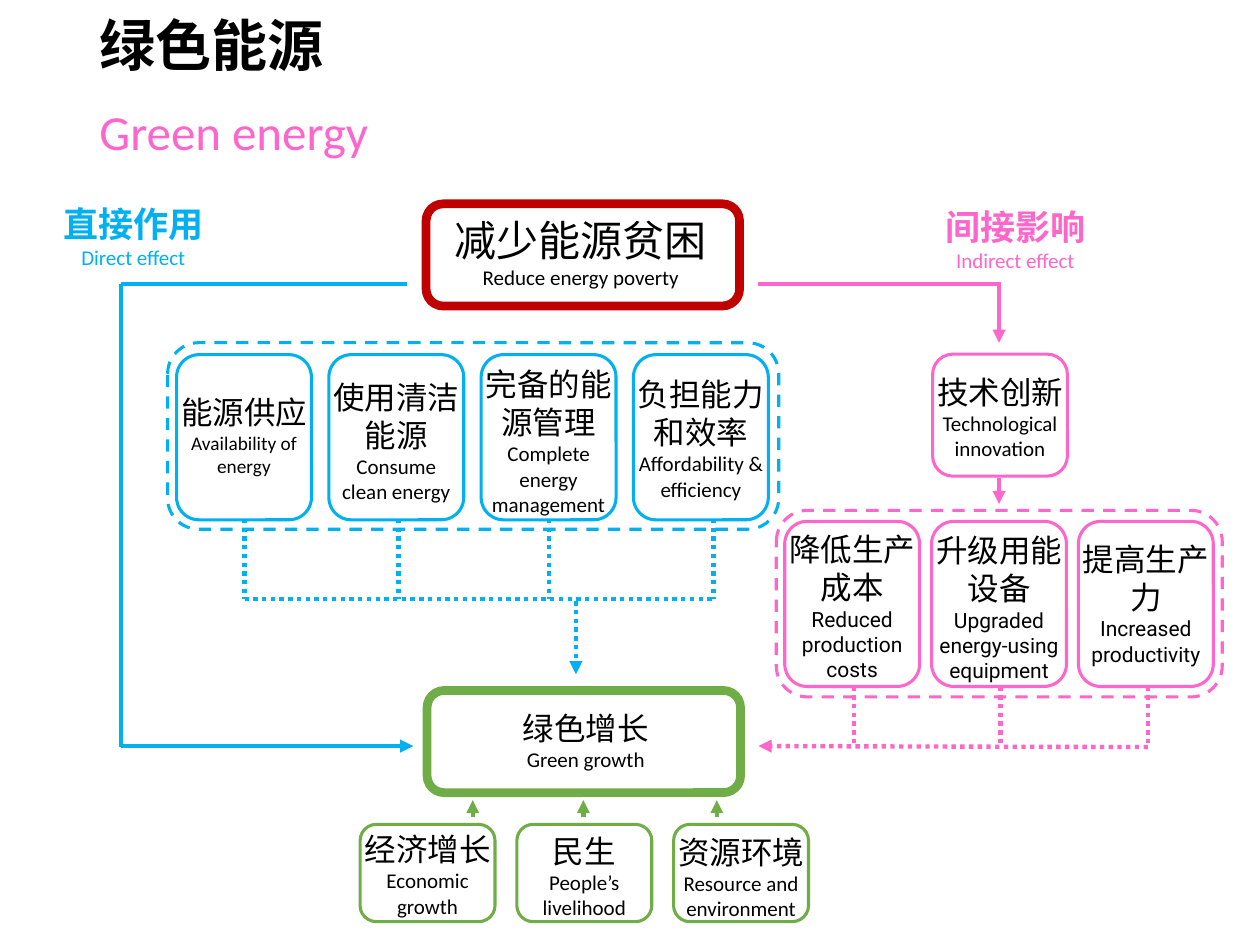
from pptx import Presentation
from pptx.dml.color import RGBColor
from pptx.enum.dml import MSO_LINE
from pptx.enum.shapes import MSO_CONNECTOR, MSO_SHAPE
from pptx.enum.text import MSO_ANCHOR, MSO_AUTO_SIZE, PP_ALIGN
from pptx.oxml.ns import qn
from pptx.util import Cm, Pt
from lxml.etree import SubElement

BLUE, PINK, GREEN, RED, BLACK = "00B0F0", "FF66CC", "70AD47", "C00000", "000000"
DOT, DASH = MSO_LINE.ROUND_DOT, MSO_LINE.DASH
CARD_WIDTH = 2.72

# Labels: lines, centre x, top, width, height, heading size, colour, bold heading
LABELS = [
    (["减少能源贫困", "Reduce energy poverty"], 11.71, 4.19, 5.7, 1.8, 24, BLACK, False),
    (["直接作用", "Direct effect"], 2.69, 3.96, 3.4, 1.63, 20, BLUE, True),
    (["间接影响", "Indirect effect"], 20.47, 4.01, 4.06, 1.63, 20, PINK, True),
    (["绿色增长", "Green growth"], 11.81, 14.17, 5.36, 1.55, 18, BLACK, False),
]

# Frames: left, top, width, height, colour, line width, dash
FRAMES = [
    (8.59, 4.11, 6.32, 2.06, RED, 5, None),
    (8.61, 13.92, 6.32, 2.06, GREEN, 5, None),
    (3.38, 6.91, 12.32, 3.76, BLUE, 1.75, DASH),
    (15.65, 10.29, 8.99, 3.76, PINK, 1.75, DASH),
]

# Rows of cards; each card: lines, text top, text width, text height, caption size
CARD_ROWS = [
    dict(left=3.56, pitch=3.07, top=7.15, height=3.33, colour=BLUE, font="Calibri", cards=[
        (["能源供应", "Availability of energy"], 7.8, 3.05, 1.96, 11),
        (["使用清洁能源", "Consume", "clean energy"], 7.49, 3.23, 2.82, 12),
        (["完备的能源管理", "Complete", "energy management"], 7.24, 3.58, 3.33, 12),
        (["负担能力和效率", "Affordability & efficiency"], 7.44, 3.4, 3.58, 12),
    ]),
    dict(left=18.8, pitch=0, top=7.14, height=2.46, colour=PINK, font="Calibri", cards=[
        (["技术创新", "Technological innovation"], 7.39, 3.81, 2.06, 12),
    ]),
    dict(left=15.82, pitch=2.96, top=10.51, height=3.33, colour=PINK, font="Roboto", cards=[
        (["降低生产成本", "Reduced production costs"], 10.57, 3.07, 3.33, 12),
        (["升级用能设备", "Upgraded energy-using equipment"], 10.59, 3.53, 3.33, 12),
        (["提高生产力", "Increased productivity"], 10.77, 3.07, 2.82, 12),
    ]),
    dict(left=7.26, pitch=3.16, top=16.62, height=1.96, colour=GREEN, font="Calibri", cards=[
        (["经济增长", "Economic growth"], 16.61, 3.23, 2.06, 12),
        (["民生", "People’s livelihood"], 16.64, 3.07, 2.06, 12),
        (["资源环境", "Resource and environment"], 16.66, 4.06, 2.06, 12),
    ]),
]

# Links: start x, start y, end x, end y, colour, dash, arrow at end
LINKS = [
    (8.2, 5.72, 2.44, 5.72, BLUE, None, False),
    (2.44, 5.72, 2.44, 15.06, BLUE, None, False),
    (2.44, 15.04, 8.33, 15.04, BLUE, None, True),
    (4.93, 12.07, 14.38, 12.07, BLUE, DOT, False),
    (11.61, 12.12, 11.61, 13.59, BLUE, DOT, True),
    (15.29, 5.72, 20.17, 5.72, PINK, None, False),
    (20.14, 5.72, 20.14, 6.91, PINK, None, True),
    (20.14, 9.63, 20.14, 10.16, PINK, None, True),
    (23.14, 15.06, 15.29, 15.04, PINK, DOT, True),
]
LINKS += [(x, 10.46, x, 12.07, BLUE, DOT, False) for x in (4.93, 8.03, 11.07, 14.38)]
LINKS += [(x, 13.84, x, 15.04, PINK, DOT, False) for x in (17.22, 20.17, 23.14)]
LINKS += [(x, 16.46, x, 16.13, GREEN, DOT, True) for x in (9.53, 11.76, 14.45)]


def rgb(colour):
    return RGBColor.from_string(colour)


def apply(target, **values):
    for key, value in values.items():
        setattr(target, key, value)


def style_font(font, name, size, colour, bold=False):
    apply(font, name=name, size=Pt(size), bold=bold)
    font.color.rgb = rgb(colour)


def style_line(line, colour, width, dash):
    line.color.rgb = rgb(colour)
    line.width = Pt(width)
    if dash:
        line.dash_style = dash


def fill_placeholder(holder, text, place, anchor, *font):
    """Move a placeholder and give it one left-aligned line without a bullet."""
    apply(holder, **dict(zip(("left", "top", "width", "height"), map(Cm, place))))
    holder.text_frame.text = text
    apply(holder.text_frame, vertical_anchor=anchor, word_wrap=True)
    paragraph = holder.text_frame.paragraphs[0]
    apply(paragraph, alignment=PP_ALIGN.LEFT, line_spacing=0.9, space_before=Pt(0))
    properties = paragraph._p.get_or_add_pPr()
    apply_indent = {"marL": "0", "indent": "0"}
    for key, value in apply_indent.items():
        properties.set(key, value)
    SubElement(properties, qn("a:buNone"))
    style_font(paragraph.runs[0].font, *font)


def add_label(slide, lines, centre, top, width, height, size,
              colour=BLACK, bold=False, font="Calibri", caption_size=12):
    """Add a centred heading with its smaller caption lines below."""
    box = slide.shapes.add_textbox(Cm(centre - width / 2), Cm(top), Cm(width), Cm(height))
    frame = box.text_frame
    apply(frame, word_wrap=True, auto_size=MSO_AUTO_SIZE.SHAPE_TO_FIT_TEXT)
    frame.text = "\n".join(lines)
    for index, paragraph in enumerate(frame.paragraphs):
        paragraph.alignment = PP_ALIGN.CENTER
        heading = index == 0
        style_font(paragraph.runs[0].font, font, size if heading else caption_size,
                   colour, bold and heading)


def add_frame(slide, left, top, width, height, colour, line_width, dash=None):
    frame = slide.shapes.add_shape(MSO_SHAPE.ROUNDED_RECTANGLE,
                                   *map(Cm, (left, top, width, height)))
    frame.shadow.inherit = False
    frame.fill.background()
    style_line(frame.line, colour, line_width, dash)


def add_card_row(slide, left, pitch, top, height, colour, font, cards):
    for index, (lines, text_top, text_width, text_height, caption_size) in enumerate(cards):
        card_left = left + index * pitch
        add_label(slide, lines, card_left + CARD_WIDTH / 2, text_top, text_width,
                  text_height, 18, font=font, caption_size=caption_size)
        add_frame(slide, card_left, top, CARD_WIDTH, height, colour, 1.75)


def add_link(slide, x1, y1, x2, y2, colour, dash, arrow):
    link = slide.shapes.add_connector(MSO_CONNECTOR.STRAIGHT, *map(Cm, (x1, y1, x2, y2)))
    style_line(link.line, colour, 2.5, dash)
    properties = link._element.spPr
    if arrow:
        SubElement(properties.find(qn("a:ln")), qn("a:tailEnd"), type="triangle")
    SubElement(properties, qn("a:effectLst"))


def main():
    deck = Presentation()
    apply(deck, slide_width=Cm(25.4), slide_height=Cm(19.05))
    slide = deck.slides.add_slide(deck.slide_layouts[1])
    fill_placeholder(slide.shapes.title, "绿色能源", (1.75, 0.33, 21.89, 1.3),
                     MSO_ANCHOR.MIDDLE, "Arial", 32, BLACK, True)
    fill_placeholder(slide.placeholders[1], "Green energy", (1.75, 2.06, 23.67, 1.55),
                     MSO_ANCHOR.TOP, "Calibri", 28, PINK)
    for label in LABELS:
        add_label(slide, *label)
    for row in CARD_ROWS:
        add_card_row(slide, **row)
    for frame in FRAMES:
        add_frame(slide, *frame)
    for link in LINKS:
        add_link(slide, *link)
    deck.save("out.pptx")


if __name__ == "__main__":
    main()
